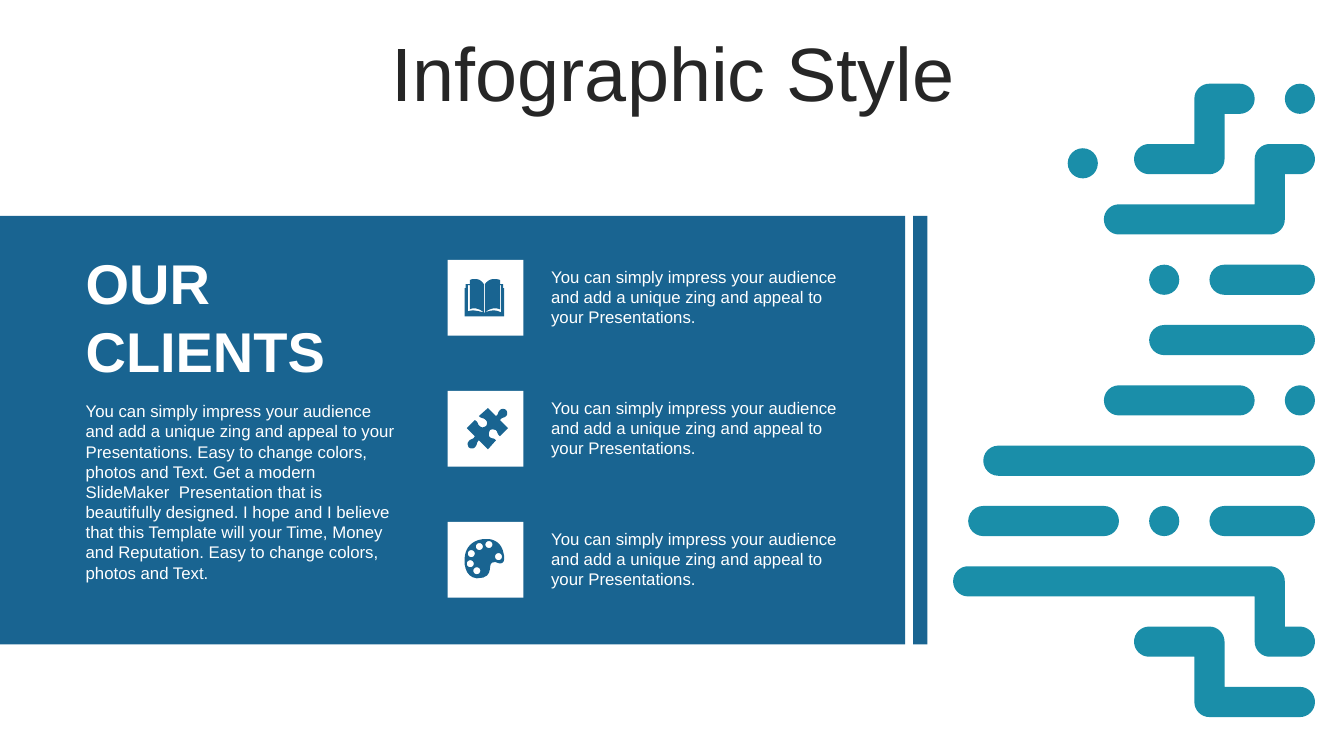
from math import cos, pi, sin

from pptx import Presentation
from pptx.dml.color import RGBColor
from pptx.enum.shapes import MSO_SHAPE
from pptx.enum.text import MSO_ANCHOR, PP_ALIGN
from pptx.util import Cm, Pt

# Content
TITLE = "Infographic Style"
HEADING = ["OUR", "CLIENTS"]
INTRO = ("You can simply impress your audience and add a unique zing and appeal to your "
         "Presentations. Easy to change colors, photos and Text. Get a modern SlideMaker  "
         "Presentation that is beautifully designed. I hope and I believe that this Template "
         "will your Time, Money and Reputation. Easy to change colors, photos and Text.")
BENEFIT = ("You can simply impress your audience and add a unique zing and appeal to your "
           "Presentations.")
COLORS = {"panel": "196491", "pattern": "1A8EA9", "white": "FFFFFF", "title": "262626"}
FONT = "Arial"

# Icon outlines in hundredths of an inch from the tile corner:
# two numbers end a straight line, six end a Bézier curve
BOOK = [(36, 52), (36, 52, 37, 53, 37, 52), (43, 50, 47, 49, 53, 52), (53, 25), (52, 25),
        (52, 49), (47, 47, 42, 48, 37, 52), (37, 24), (40, 20, 43, 19, 46, 19),
        (48, 19, 50, 19, 52, 20), (52, 24), (55, 24), (55, 28), (56, 28), (56, 56),
        (17, 56), (17, 28), (18, 28), (18, 24), (22, 24), (22, 20),
        (24, 19, 25, 19, 27, 19), (31, 19, 33, 20, 36, 24), (36, 52),
        (31, 48, 26, 47, 22, 49), (22, 25), (20, 25), (20, 51), (26, 49, 30, 51, 36, 52)]
PUZZLE = [(58, 19), (59, 20, 60, 23, 58, 25), (56, 27, 54, 26, 52, 29), (60, 37), (52, 45),
          (49, 43, 50, 41, 48, 39), (46, 38, 43, 38, 42, 39), (41, 41, 40, 44, 42, 46),
          (45, 48, 45, 46, 48, 49), (40, 58), (31, 49), (28, 52, 30, 53, 27, 56),
          (25, 58, 22, 57, 21, 56), (20, 54, 19, 52, 21, 50), (23, 47, 25, 49, 27, 45),
          (19, 37), (27, 29), (31, 31, 29, 33, 32, 35), (34, 37, 36, 36, 38, 35),
          (39, 34, 40, 31, 38, 29), (35, 26, 34, 28, 31, 25), (40, 17), (48, 25),
          (51, 23, 49, 22, 52, 19), (54, 17, 57, 18, 58, 19)]
PALETTE = [(38, 17), (39, 17, 40, 17, 41, 17), (48, 18, 53, 22, 55, 29),
           (59, 43, 52, 42, 48, 40), (36, 38, 50, 56, 29, 56), (17, 55, 15, 40, 18, 30),
           (20, 24, 26, 17, 38, 17)]
PAINT_WELLS = [(29, 48.5), (22.5, 41.5), (50.5, 34.5), (23.5, 31.5), (31.5, 24.5), (41, 22.5)]
WELL_RADIUS = 3.5
ICONS = [(BOOK, []), (PUZZLE, []), (PALETTE, PAINT_WELLS)]

# Pattern on a square grid: (row, first column, last column)
BARS = [(0, 22, 24), (1.07, 7.6, 9.6), (3, 13, 15), (3, 17, 24), (4, 13, 24), (5, 10, 20),
        (5, 22, 24), (6, 2, 24), (7, 1, 11), (7, 13, 15), (7, 17, 24)]
# Bent bars: (upper row, first column, stem column, last column, rises to the right)
BENDS = [(0, 12, 16, 20, True), (1, 10, 20, 24, True),
         (8, 0, 20, 24, False), (9, 12, 16, 24, False)]

# Layout in centimetres
GRID, GRID_LEFT, GRID_TOP = 0.38, 24.02, 2.11
ROW_STEP, THICKNESS = 4, 2
TILE_LEFT, TILE_TOP, TILE_SIZE, TILE_STEP = 11.28, 6.55, 1.91, 3.3
ICON_UNIT = 0.0254

prs = Presentation()
prs.slide_width, prs.slide_height = Cm(33.87), Cm(19.05)
slide = prs.slides.add_slide(prs.slide_layouts[5])
shapes = slide.shapes


def paint(shape, color):
    shape.shadow.inherit = False
    shape.fill.solid()
    shape.fill.fore_color.rgb = RGBColor.from_string(COLORS[color])
    shape.line.fill.background()


def add_block(kind, left, top, width, height, color):
    block = shapes.add_shape(kind, Cm(left), Cm(top), Cm(width), Cm(height))
    paint(block, color)
    return block


def add_outline(contours, left, top, unit, color):
    placed = [[(Cm(left + x * unit), Cm(top + y * unit)) for x, y in contour]
              for contour in contours]
    builder = shapes.build_freeform(*placed[0][0])
    builder.add_line_segments(placed[0][1:], close=True)
    for contour in placed[1:]:
        builder.move_to(*contour[0])
        builder.add_line_segments(contour[1:], close=True)
    paint(builder.convert_to_shape(), color)


def style(paragraph, size, color, bold=False):
    paragraph.font.name, paragraph.font.size = FONT, Pt(size)
    paragraph.font.bold = bold
    paragraph.font.color.rgb = RGBColor.from_string(COLORS[color])


def add_text(lines, left, top, width, height, size, bold=False, inset=0.25):
    frame = shapes.add_textbox(Cm(left), Cm(top), Cm(width), Cm(height)).text_frame
    frame.word_wrap = True
    frame.margin_left = Cm(inset)
    frame.text = "\n".join(lines)
    for paragraph in frame.paragraphs:
        style(paragraph, size, "white", bold)


def flatten(steps, pieces=8):
    points = [steps[0]]
    for step in steps[1:]:
        if len(step) == 2:
            points.append(step)
            continue
        x0, y0 = points[-1]
        x1, y1, x2, y2, x3, y3 = step
        for t in (i / pieces for i in range(1, pieces + 1)):
            a, b, c, d = (1 - t) ** 3, 3 * t * (1 - t) ** 2, 3 * t * t * (1 - t), t ** 3
            points.append((a * x0 + b * x1 + c * x2 + d * x3,
                           a * y0 + b * y1 + c * y2 + d * y3))
    return points


def circle(x, y, radius, pieces=24):
    angles = [2 * pi * i / pieces for i in range(pieces)]
    return [(x + radius * cos(a), y + radius * sin(a)) for a in angles]


def direction(start, end):
    dx, dy = end[0] - start[0], end[1] - start[1]
    length = abs(dx) + abs(dy)
    return dx / length, dy / length


def bend_outline(first, stem, last, rises):
    right = stem + THICKNESS
    corners = [(first, 0), (right, 0), (right, 4), (last, 4),
               (last, 6), (stem, 6), (stem, 2), (first, 2)]
    if rises:
        corners = [(x, 6 - y) for x, y in corners]
    points = []
    for i, (x, y) in enumerate(corners):
        if i in (2, 6):  # inner corners stay sharp
            points.append((x, y))
            continue
        ax, ay = direction((x, y), corners[i - 1])
        bx, by = direction((x, y), corners[(i + 1) % 8])
        for t in (pi / 2 * k / 8 for k in range(9)):
            points.append((x + ax * (1 - sin(t)) + bx * (1 - cos(t)),
                           y + ay * (1 - sin(t)) + by * (1 - cos(t))))
    return points


# Panel and its edge strip
for left, width in [(0, 22.81), (23.01, 0.36)]:
    add_block(MSO_SHAPE.RECTANGLE, left, 5.44, width, 10.8, "panel")

# Title
title = shapes.title
title.left, title.top, title.width, title.height = Cm(0.89), Cm(0.94), Cm(32.16), Cm(2.01)
title.text_frame.text = TITLE
title.text_frame.vertical_anchor = MSO_ANCHOR.MIDDLE
headline = title.text_frame.paragraphs[0]
headline.alignment, headline.line_spacing = PP_ALIGN.CENTER, 0.9
style(headline, 54, "title")

# Heading and introduction
add_text(HEADING, 1.91, 6.15, 8.71, 3.68, 40, bold=True)
add_text([INTRO], 1.91, 9.98, 8.31, 4.88, 12)

# Benefits with icon tiles
for row, (icon, holes) in enumerate(ICONS):
    top = TILE_TOP + row * TILE_STEP
    add_block(MSO_SHAPE.RECTANGLE, TILE_LEFT, top, TILE_SIZE, TILE_SIZE, "white")
    contours = [flatten(icon)] + [circle(x, y, WELL_RADIUS) for x, y in holes]
    add_outline(contours, TILE_LEFT, top, ICON_UNIT, "panel")
    add_text([BENEFIT], 13.59, top + 0.05, 8.05, 1.8, 12, inset=0.3)

# Pattern of bars, dots and bends
for row, first, last in BARS:
    bar = add_block(MSO_SHAPE.ROUNDED_RECTANGLE, GRID_LEFT + first * GRID,
                    GRID_TOP + row * ROW_STEP * GRID, (last - first) * GRID,
                    THICKNESS * GRID, "pattern")
    bar.adjustments[0] = 0.5
for row, first, stem, last, rises in BENDS:
    add_outline([bend_outline(first, stem, last, rises)], GRID_LEFT,
                GRID_TOP + row * ROW_STEP * GRID, GRID, "pattern")

prs.save("out.pptx")
